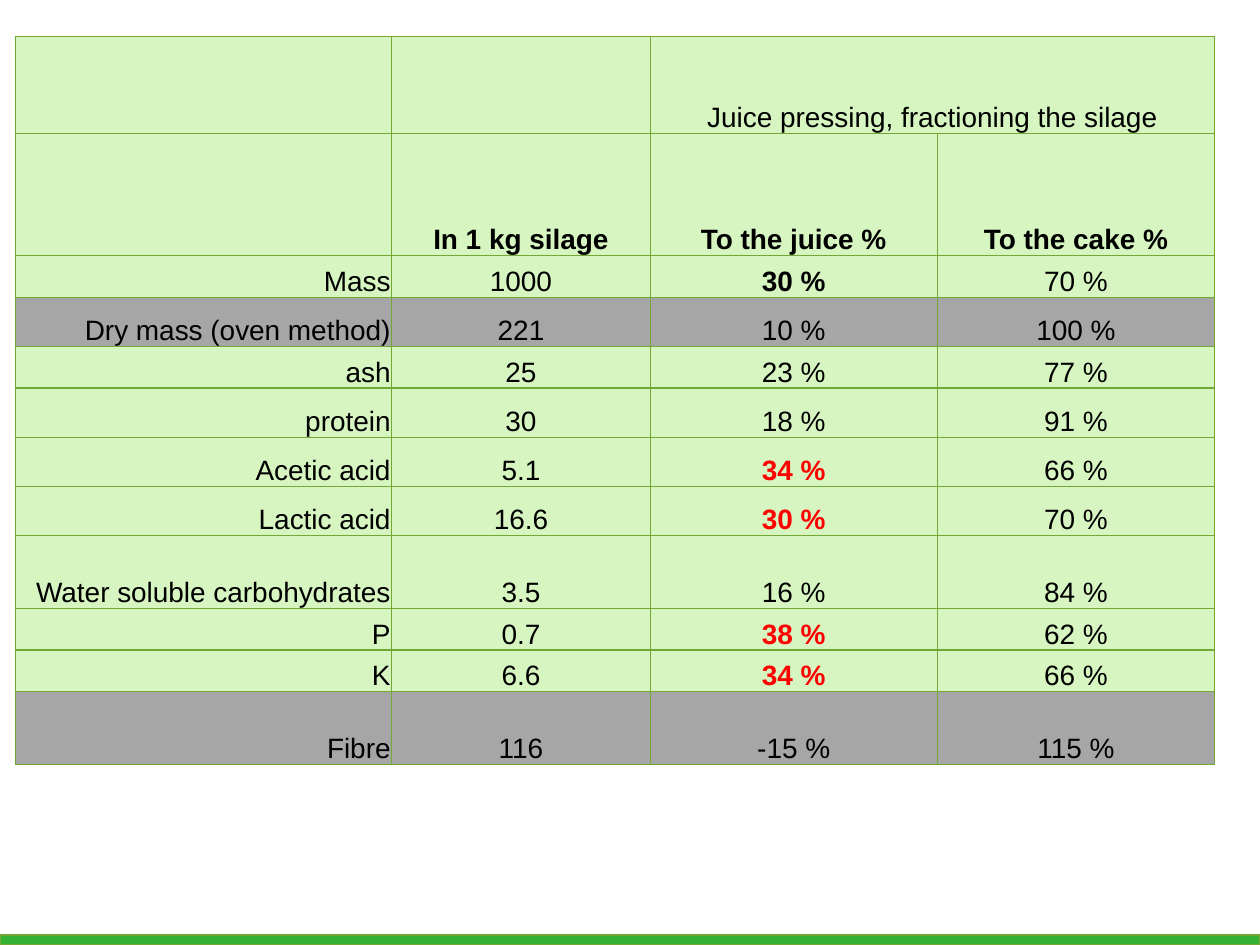
from lxml import etree
from pptx import Presentation
from pptx.dml.color import RGBColor
from pptx.enum.shapes import MSO_SHAPE
from pptx.enum.text import MSO_ANCHOR, PP_ALIGN
from pptx.oxml.ns import qn
from pptx.util import Inches, Pt

RECTANGLE = MSO_SHAPE.RECTANGLE
BOTTOM = MSO_ANCHOR.BOTTOM
RIGHT, CENTER = PP_ALIGN.RIGHT, PP_ALIGN.CENTER

THEME = {
    "font": "Arial", "size": 16, "rule": 0.75,
    "text": "000000", "accent": "FF0000", "line": "74A834",
    "cell": "D6F5C1", "band": "A6A6A6", "footer": "34B233",
}

# Row height, then the four cells
ROWS = [
    (0.77, ("", "", "Juice pressing, fractioning the silage", "")),
    (0.97, ("", "In 1 kg silage", "To the juice %", "To the cake %")),
    (0.33, ("Mass", "1000", "30 %", "70 %")),
    (0.39, ("Dry mass (oven method)", "221", "10 %", "100 %")),
    (0.33, ("ash", "25", "23 %", "77 %")),
    (0.39, ("protein", "30", "18 %", "91 %")),
    (0.39, ("Acetic acid", "5.1", "34 %", "66 %")),
    (0.39, ("Lactic acid", "16.6", "30 %", "70 %")),
    (0.58, ("Water soluble carbohydrates", "3.5", "16 %", "84 %")),
    (0.33, ("P", "0.7", "38 %", "62 %")),
    (0.33, ("K", "6.6", "34 %", "66 %")),
    (0.58, ("Fibre", "116", "-15 %", "115 %")),
]
COLUMN_WIDTHS = (2.99, 2.05, 2.28, 2.2)
HEADING_ROW, JUICE_COLUMN = 1, 2
BANDED = {"Dry mass (oven method)", "Fibre"}
BOLD_JUICE = {"Mass"}
RED_JUICE = {"Acetic acid", "Lactic acid", "P", "K"}

SLIDE_W, SLIDE_H = 10, 7.5
TABLE_LEFT, TABLE_TOP = 0.12, 0.29
FOOTER_H = 0.08


def color(role):
    return RGBColor.from_string(THEME[role])


def add_borders(cell):
    properties = cell._tc.get_or_add_tcPr()
    for side in ("a:lnL", "a:lnR", "a:lnT", "a:lnB"):
        line = etree.SubElement(properties, qn(side), w=str(Pt(THEME["rule"])))
        fill = etree.SubElement(line, qn("a:solidFill"))
        etree.SubElement(fill, qn("a:srgbClr"), val=THEME["line"])


def style_cell(cell, fill):
    add_borders(cell)
    cell.fill.solid()
    cell.fill.fore_color.rgb = color(fill)
    cell.vertical_anchor = BOTTOM
    cell.margin_left = cell.margin_right = cell.margin_top = Inches(0.01)
    cell.margin_bottom = 0


def write_cell(cell, text, align, bold, role):
    paragraph = cell.text_frame.paragraphs[0]
    paragraph.alignment = align
    run = paragraph.add_run()
    run.text = text
    run.font.name = THEME["font"]
    run.font.size = Pt(THEME["size"])
    run.font.bold = bold
    run.font.color.rgb = color(role)


def add_footer(slide):
    footer = slide.shapes.add_shape(
        RECTANGLE, 0, Inches(SLIDE_H - FOOTER_H), Inches(SLIDE_W), Inches(FOOTER_H))
    footer.shadow.inherit = False
    footer.fill.solid()
    footer.fill.fore_color.rgb = color("footer")
    footer.line.color.rgb = color("line")
    footer.line.width = Pt(THEME["rule"])


def add_silage_table(slide):
    table = slide.shapes.add_table(
        len(ROWS), len(COLUMN_WIDTHS), Inches(TABLE_LEFT), Inches(TABLE_TOP),
        Inches(sum(COLUMN_WIDTHS)), Inches(sum(height for height, _ in ROWS))).table
    table.first_row = table.horz_banding = False
    for column, width in zip(table.columns, COLUMN_WIDTHS):
        column.width = Inches(width)
    table.cell(0, JUICE_COLUMN).merge(table.cell(0, JUICE_COLUMN + 1))

    for r, (height, texts) in enumerate(ROWS):
        table.rows[r].height = Inches(height)
        component = texts[0]
        for c, text in enumerate(texts):
            cell = table.cell(r, c)
            style_cell(cell, "band" if component in BANDED else "cell")
            if not text:
                continue
            red = c == JUICE_COLUMN and component in RED_JUICE
            bold = red or r == HEADING_ROW or (
                c == JUICE_COLUMN and component in BOLD_JUICE)
            write_cell(cell, text, CENTER if c else RIGHT, bold,
                       "accent" if red else "text")


def main():
    deck = Presentation()
    deck.slide_width, deck.slide_height = Inches(SLIDE_W), Inches(SLIDE_H)
    slide = deck.slides.add_slide(deck.slide_layouts[6])
    add_footer(slide)
    add_silage_table(slide)
    deck.save("out.pptx")


if __name__ == "__main__":
    main()
